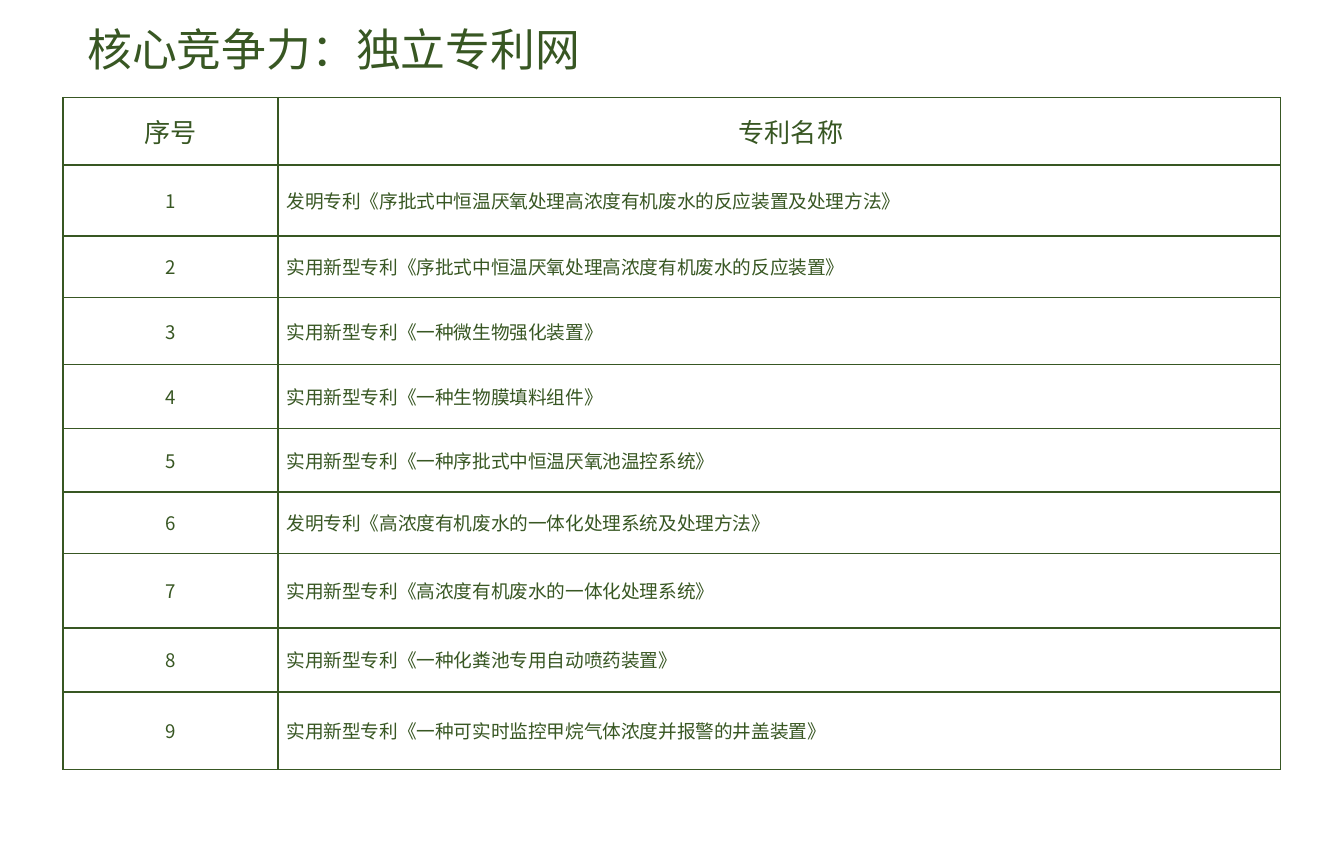
import dataclasses

import pptx
import pptx.dml.color
import pptx.enum.text
import pptx.oxml
import pptx.oxml.ns
import pptx.util

Pt = pptx.util.Pt
ALIGN = pptx.enum.text.PP_ALIGN
MIDDLE = pptx.enum.text.MSO_ANCHOR.MIDDLE
FONT = "Noto Sans CJK SC"
GREEN = "385723"
NS = pptx.oxml.ns.nsdecls("a")


@dataclasses.dataclass(frozen=True)
class Style:
    size: float
    align: ALIGN
    left: float = 7.2
    right: float = 7.2
    edge: float = 3.6


@dataclasses.dataclass(frozen=True)
class Patent:
    kind: str
    name: str
    height: float


TITLE = Style(24, ALIGN.LEFT, 5.76, 5.76, 2.88)
HEAD = Style(14, ALIGN.CENTER)
LABEL = Style(14, ALIGN.CENTER, left=19.7)
INDEX = Style(10, ALIGN.CENTER)
BODY = Style(10, ALIGN.LEFT, 4.5, 0, 0)

MAIN = "发明专利"
MODEL = "实用新型专利"
PATENTS = [
    Patent(MAIN, "序批式中恒温厌氧处理高浓度有机废水的反应装置及处理方法", 37.9),
    Patent(MODEL, "序批式中恒温厌氧处理高浓度有机废水的反应装置", 33),
    Patent(MODEL, "一种微生物强化装置", 35.9),
    Patent(MODEL, "一种生物膜填料组件", 34.3),
    Patent(MODEL, "一种序批式中恒温厌氧池温控系统", 34),
    Patent(MAIN, "高浓度有机废水的一体化处理系统及处理方法", 33),
    Patent(MODEL, "高浓度有机废水的一体化处理系统", 39.9),
    Patent(MODEL, "一种化粪池专用自动喷药装置", 34.2),
    Patent(MODEL, "一种可实时监控甲烷气体浓度并报警的井盖装置", 41.8),
]


def color(code: str) -> pptx.dml.color.RGBColor:
    return pptx.dml.color.RGBColor.from_string(code)


def write(frame, text: str, style: Style) -> None:
    frame.text = text
    para = frame.paragraphs[0]
    para.alignment = style.align
    font = para.runs[0].font
    font.size = Pt(style.size)
    font.bold = False
    font.name = FONT
    font.color.rgb = color(GREEN)
    face = pptx.oxml.parse_xml(f'<a:ea {NS} typeface="{FONT}"/>')
    para.runs[0]._r.get_or_add_rPr().append(face)


def inset(box, style: Style) -> None:
    box.margin_left, box.margin_right = Pt(style.left), Pt(style.right)
    box.margin_top = box.margin_bottom = Pt(style.edge)
    box.vertical_anchor = MIDDLE


def border(cell) -> None:
    props = cell._tc.get_or_add_tcPr()
    for side in "LRTB":
        props.append(pptx.oxml.parse_xml(
            f'<a:ln{side} {NS} w="{Pt(1)}"><a:solidFill>'
            f'<a:srgbClr val="{GREEN}"/></a:solidFill></a:ln{side}>'))


def draw_cell(cell, text: str, style: Style) -> None:
    write(cell.text_frame, text, style)
    inset(cell, style)
    border(cell)
    cell.fill.background()


def draw_title(slide, text: str) -> None:
    title = slide.shapes.title
    title.left, title.top = Pt(41), Pt(3.6)
    title.width, title.height = Pt(656), Pt(48.2)
    frame = title.text_frame
    write(frame, text, TITLE)
    inset(frame, TITLE)
    frame.word_wrap = True
    frame.paragraphs[0].line_spacing = 0.9


def draw_table(slide, patents: list[Patent]) -> None:
    widths = [115.2, 537.1]
    heights = [36.3] + [item.height for item in patents]
    table = slide.shapes.add_table(
        len(heights), len(widths), Pt(33.8), Pt(52.3),
        Pt(sum(widths)), Pt(sum(heights))).table
    table.first_row = table.horz_banding = False
    for col, width in zip(table.columns, widths):
        col.width = Pt(width)
    for row, height in zip(table.rows, heights):
        row.height = Pt(height)
    draw_cell(table.cell(0, 0), "序号", HEAD)
    draw_cell(table.cell(0, 1), "专利名称", LABEL)
    for num, item in enumerate(patents, 1):
        draw_cell(table.cell(num, 0), str(num), INDEX)
        draw_cell(table.cell(num, 1), f"{item.kind}《{item.name}》", BODY)


def main() -> None:
    deck = pptx.Presentation()
    deck.slide_width, deck.slide_height = Pt(720), Pt(450.7)
    slide = deck.slides.add_slide(deck.slide_layouts[5])
    draw_title(slide, "核心竞争力：独立专利网")
    draw_table(slide, PATENTS)
    deck.save("out.pptx")


if __name__ == "__main__":
    main()
